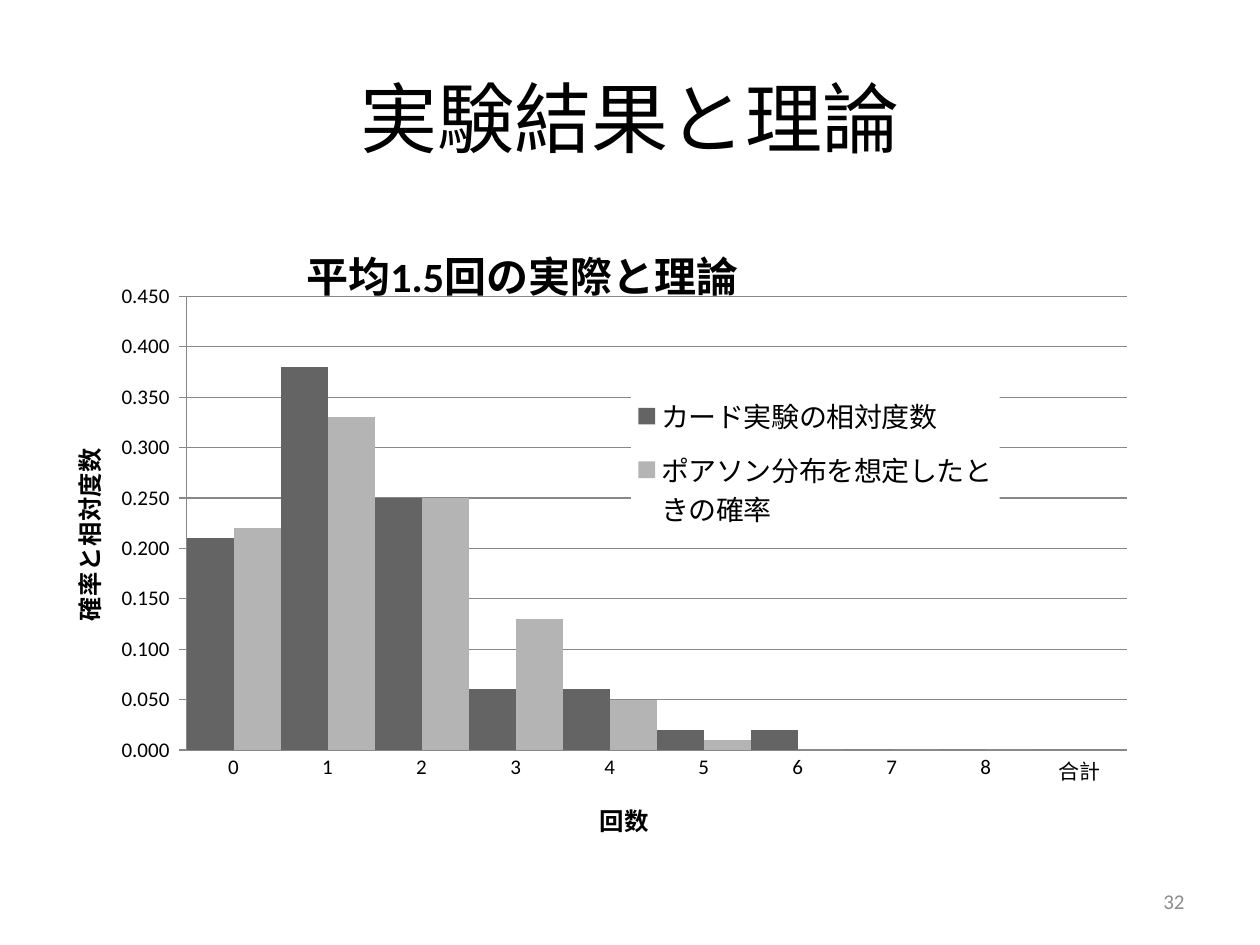
from lxml.etree import SubElement
from pptx import Presentation
from pptx.chart.data import CategoryChartData
from pptx.dml.color import RGBColor
from pptx.enum.chart import XL_CHART_TYPE as ChartType
from pptx.enum.chart import XL_LEGEND_POSITION as LegendPos
from pptx.enum.chart import XL_TICK_MARK as Tick
from pptx.enum.text import MSO_ANCHOR as Anchor
from pptx.enum.text import PP_ALIGN as Align
from pptx.oxml.ns import qn
from pptx.util import Pt

# Content
HEADING = "実験結果と理論"
PAGE_NUMBER = "32"
CHART_TITLE = "平均1.5回の実際と理論"
COUNT_TITLE = "回数"
SHARE_TITLE = "確率と相対度数"
COUNTS = ["0", "1", "2", "3", "4", "5", "6", "7", "8", "合計"]
EXPERIMENT = [0.21, 0.38, 0.25, 0.06, 0.06, 0.02, 0.02, 0, 0, None]
POISSON = [0.22, 0.33, 0.25, 0.13, 0.05, 0.01, 0, 0, 0, None]

# Format
FONT = "Calibri"
BLACK = RGBColor(0x00, 0x00, 0x00)
AXIS_GRAY = RGBColor(0x88, 0x88, 0x88)
PAGE_GRAY = RGBColor(0x8C, 0x8C, 0x8C)
DARK_GRAY = RGBColor(0x64, 0x64, 0x64)
LIGHT_GRAY = RGBColor(0xB4, 0xB4, 0xB4)
WHITE = RGBColor(0xFF, 0xFF, 0xFF)
SERIES = [
    ("カード実験の相対度数", EXPERIMENT, DARK_GRAY),
    ("ポアソン分布を想定したときの確率", POISSON, LIGHT_GRAY),
]

# Places in points: left, top, width, height
HEADING_BOX = (36, 21.6, 648, 90)
CHART_BOX = (36, 126, 648, 356.4)
PAGE_BOX = (516, 500.4, 168, 28.8)


def points(box):
    return [Pt(length) for length in box]


def format_font(font, size, color=BLACK, bold=False):
    font.name = FONT
    font.size = Pt(size)
    font.bold = bold
    font.color.rgb = color


def write_text(frame, text, *, size, color=BLACK, bold=False, align=Align.CENTER, anchor=None):
    if anchor is not None:
        frame.word_wrap = True
        frame.vertical_anchor = anchor
    paragraph = frame.paragraphs[0]
    paragraph.alignment = align
    run = paragraph.add_run()
    run.text = text
    format_font(run.font, size, color, bold)


def place(part, after, **percents):
    """Give a chart part a manual layout in percent of the chart."""
    for old in part.findall(qn("c:layout")):
        part.remove(old)
    layout = SubElement(part, qn("c:layout"))
    manual = SubElement(layout, qn("c:manualLayout"))
    if after is None:
        part.insert(0, layout)
        SubElement(manual, qn("c:layoutTarget")).set("val", "inner")
    else:
        part.find(qn(after)).addnext(layout)
    for key in ("x", "y"):
        SubElement(manual, qn(f"c:{key}Mode")).set("val", "edge")
    for key, value in percents.items():
        SubElement(manual, qn(f"c:{key}")).set("val", str(value / 100))


def title_part(title, text, size, x, y):
    write_text(title.text_frame, text, size=size, bold=True)
    place(title._element, "c:tx", x=x, y=y)


def format_line(line):
    line.color.rgb = AXIS_GRAY
    line.width = Pt(0.75)


prs = Presentation()
prs.slide_width, prs.slide_height = Pt(720), Pt(540)
slide = prs.slides.add_slide(prs.slide_layouts[5])

# Heading
heading = slide.shapes.title
heading.left, heading.top, heading.width, heading.height = points(HEADING_BOX)
write_text(heading.text_frame, HEADING, size=44, anchor=Anchor.MIDDLE)

# Chart
data = CategoryChartData(number_format="0.000")
data.categories = COUNTS
for name, values, _ in SERIES:
    data.add_series(name, values)
chart = slide.shapes.add_chart(
    ChartType.COLUMN_CLUSTERED, *points(CHART_BOX), data
).chart
format_font(chart.font, 10)
chart.has_title = True
title_part(chart.chart_title, CHART_TITLE, 24, x=20.8, y=1.9)

columns = chart.plots[0]
columns.gap_width = 0
columns.overlap = 0
columns.vary_by_categories = False
for series, (_, _, color) in zip(columns.series, SERIES):
    series.format.fill.solid()
    series.format.fill.fore_color.rgb = color
plot_area = chart._chartSpace.find(".//" + qn("c:plotArea"))
place(plot_area, None, x=10.9, y=12.3, w=82.9, h=73.5)

# Axes
count_axis, share_axis = chart.category_axis, chart.value_axis
for axis, tick in ((count_axis, Tick.NONE), (share_axis, Tick.OUTSIDE)):
    axis.major_tick_mark = tick
    axis.minor_tick_mark = Tick.NONE
    format_font(axis.tick_labels.font, 12)
    format_line(axis.format.line)
title_part(count_axis.axis_title, COUNT_TITLE, 14, x=46.9, y=93)
title_part(share_axis.axis_title, SHARE_TITLE, 14, x=0, y=36.3)
share_body = share_axis.axis_title._element.find(".//" + qn("a:bodyPr"))
share_body.set("rot", "-5400000")
share_body.set("vert", "horz")
share_axis.minimum_scale, share_axis.maximum_scale = 0, 0.45
share_axis.major_unit = 0.05
share_axis.tick_labels.number_format = r"#,##0.000_);[Red]\(#,##0.000\)"
share_axis.tick_labels.number_format_is_linked = False
share_axis.has_major_gridlines = True
format_line(share_axis.major_gridlines.format.line)

# Legend over the plot
chart.has_legend = True
legend = chart.legend
legend.position = LegendPos.RIGHT
legend.include_in_layout = False
format_font(legend.font, 16)
place(legend._element, "c:legendPos", x=50.1, y=26.2, w=32.5, h=26)
legend_look = SubElement(legend._element, qn("c:spPr"))
legend_fill = SubElement(legend_look, qn("a:solidFill"))
SubElement(legend_fill, qn("a:srgbClr")).set("val", str(WHITE))
legend._element.find(qn("c:txPr")).addprevious(legend_look)

# Page number
page = slide.shapes.add_textbox(*points(PAGE_BOX))
write_text(page.text_frame, PAGE_NUMBER, size=12, color=PAGE_GRAY,
           align=Align.RIGHT, anchor=Anchor.MIDDLE)

prs.save("out.pptx")
